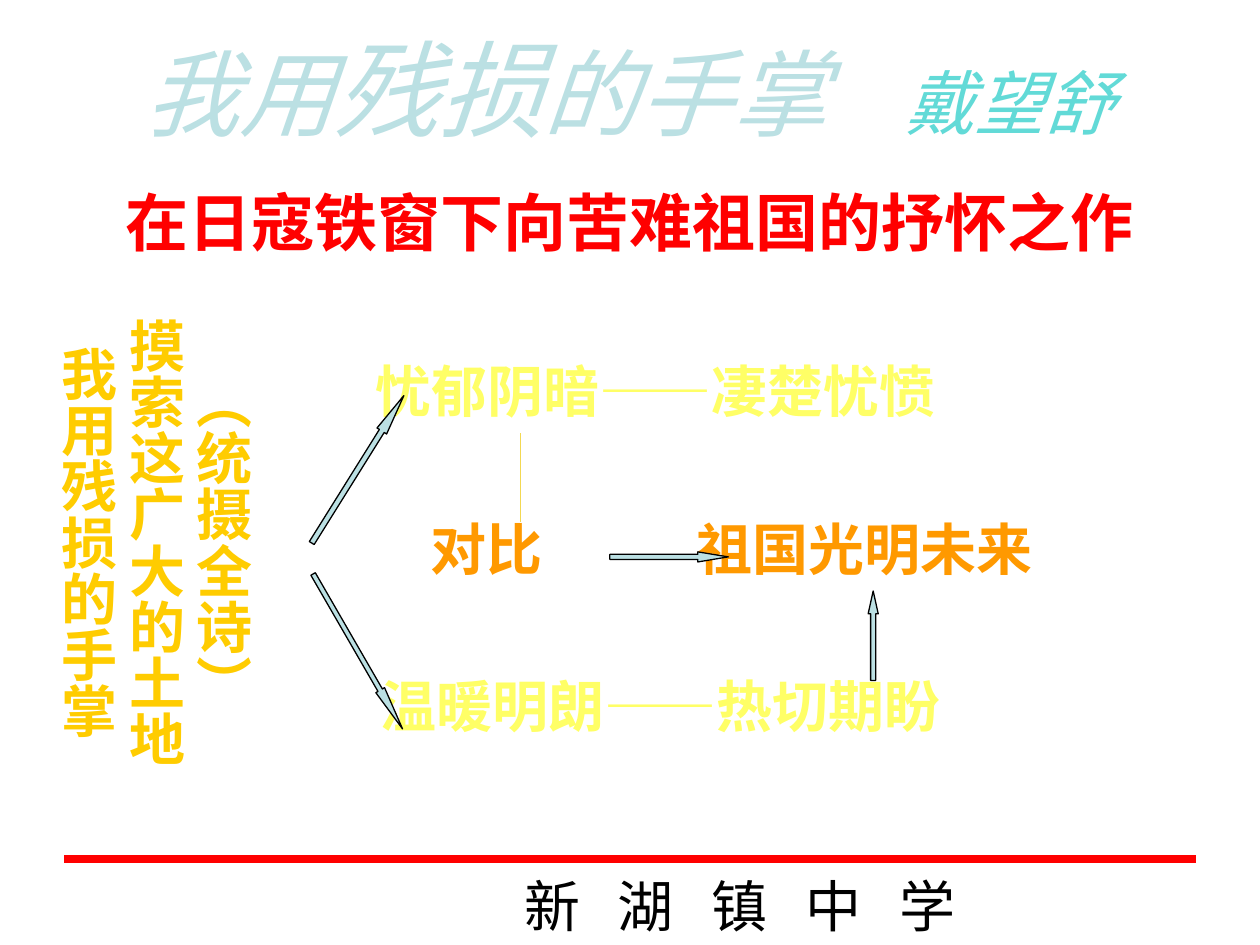
from dataclasses import dataclass

from lxml.etree import SubElement
from pptx import Presentation
from pptx.dml.color import RGBColor
from pptx.enum.shapes import MSO_CONNECTOR, MSO_SHAPE
from pptx.enum.text import MSO_ANCHOR, PP_ALIGN
from pptx.oxml.ns import qn
from pptx.util import Inches, Pt


@dataclass(frozen=True)
class Theme:
    font: str = "Arial"
    school_font: str = "Noto Sans CJK SC"
    pale_blue: str = "BBE0E3"
    teal: str = "62DAD7"
    red: str = "FF0000"
    yellow: str = "FFFF66"
    orange: str = "FF9900"
    gold: str = "FFCC00"
    link: str = "F3D851"
    black: str = "000000"
    title: int = 54
    emphasis: int = 60
    author: int = 40
    lead: int = 36
    body: int = 32


theme = Theme()

prs = Presentation()
prs.slide_width, prs.slide_height = Inches(10), Inches(7.5)
slide = prs.slides.add_slide(prs.slide_layouts[6])


def add_text(left, top, width, height, paragraphs, align=PP_ALIGN.LEFT):
    """Each paragraph is a list of (text, size, colour) runs."""
    box = slide.shapes.add_textbox(*map(Inches, (left, top, width, height)))
    frame = box.text_frame
    frame.word_wrap = True
    frame.vertical_anchor = MSO_ANCHOR.MIDDLE
    frame.margin_left = frame.margin_right = 0
    for index, runs in enumerate(paragraphs):
        paragraph = frame.add_paragraph() if index else frame.paragraphs[0]
        paragraph.alignment = align
        for words, size, colour in runs:
            run = paragraph.add_run()
            run.text = words
            run.font.name = theme.font
            run.font.size = Pt(size)
            run.font.bold = True
            run.font.color.rgb = RGBColor.from_string(colour)
    return frame


def add_line(x1, y1, x2, y2, colour, weight):
    line = slide.shapes.add_connector(
        MSO_CONNECTOR.STRAIGHT, *map(Inches, (x1, y1, x2, y2)))
    line.line.color.rgb = RGBColor.from_string(colour)
    line.line.width = Pt(weight)
    SubElement(line._element.spPr, qn("a:effectLst"))


# Footer rule and widely spaced school name
add_line(0.51, 6.82, 9.49, 6.82, theme.red, 4.5)
school = add_text(4.16, 6.87, 5.4, 0.63,
                  [[("新湖镇中学", theme.body, theme.black)]])
school_run = school.paragraphs[0].runs[0]
school_run.font.name = theme.school_font
school_run.font.bold = False
school_run.font._element.set("spc", "2160")

# Title, with the author at a tab stop on the same baseline
heading = add_text(1.15, 0, 8.6, 1.39, [[
    ("我用", theme.title, theme.pale_blue),
    ("残损", theme.emphasis, theme.pale_blue),
    ("的手掌\t", theme.title, theme.pale_blue),
    ("戴望舒", theme.author, theme.teal),
]])
tabs = SubElement(heading.paragraphs[0]._p.get_or_add_pPr(), qn("a:tabLst"))
SubElement(tabs, qn("a:tab"), pos=str(Inches(6.03)), algn="l")
for run in heading.paragraphs[0].runs:
    run.font.bold = False
    run.font.italic = True

# Theme sentence
add_text(0.5, 1.39, 9, 0.74,
         [[("在日寇铁窗下向苦难祖国的抒怀之作", theme.lead, theme.red)]],
         PP_ALIGN.CENTER)

# Mood diagram: three rows at an equal pitch
FIRST_ROW, ROW_PITCH, ROW_HEIGHT = 3.1, 1.25, 0.7
for row, left, words, colour in (
    (0, 2.98, "忧郁阴暗——凄楚忧愤", theme.yellow),
    (1, 3.42, "对比", theme.orange),
    (1, 5.53, "祖国光明未来", theme.orange),
    (2, 3.02, "温暖明朗——热切期盼", theme.yellow),
):
    top = FIRST_ROW + row * ROW_PITCH - ROW_HEIGHT / 2
    add_text(left, top, 5, ROW_HEIGHT, [[(words, theme.body, colour)]])

# Link from the dark mood to the contrast
add_line(4.13, 3.44, 4.13, 4.14, theme.link, 0.75)

# Vertical column of key lines
key_lines = add_text(-0.25, 2.43, 2.33, 4.02, [
    [("（统摄全诗）", theme.body, theme.gold)],
    [("摸索这广大的土地我用残损的手掌", theme.body, theme.gold)],
], PP_ALIGN.CENTER)
key_lines.vertical_anchor = MSO_ANCHOR.TOP
key_lines.margin_left = key_lines.margin_right = Inches(0.1)
key_lines._txBody.bodyPr.set("vert", "eaVert")

# Block arrows: shape, left, top, width, height, rotation, head length
for kind, left, top, width, height, rotation, head in (
    (MSO_SHAPE.RIGHT_ARROW, 4.84, 4.38, 0.94, 0.08, 0, 3.02),
    (MSO_SHAPE.UP_ARROW, 6.89, 4.69, 0.08, 0.71, 0, 2.27),
    (MSO_SHAPE.RIGHT_ARROW, 2.15, 3.68, 1.38, 0.09, 302, 3.67),
    (MSO_SHAPE.DOWN_ARROW, 2.8, 4.46, 0.08, 1.42, 330, 4.44),
):
    arrow = slide.shapes.add_shape(
        kind, *map(Inches, (left, top, width, height)))
    arrow.rotation = rotation
    arrow.adjustments[0] = 0.5
    arrow.adjustments[1] = head
    arrow.shadow.inherit = False
    arrow.fill.solid()
    arrow.fill.fore_color.rgb = RGBColor.from_string(theme.pale_blue)
    arrow.line.color.rgb = RGBColor.from_string(theme.black)
    arrow.line.width = Pt(0.75)

prs.save("out.pptx")
